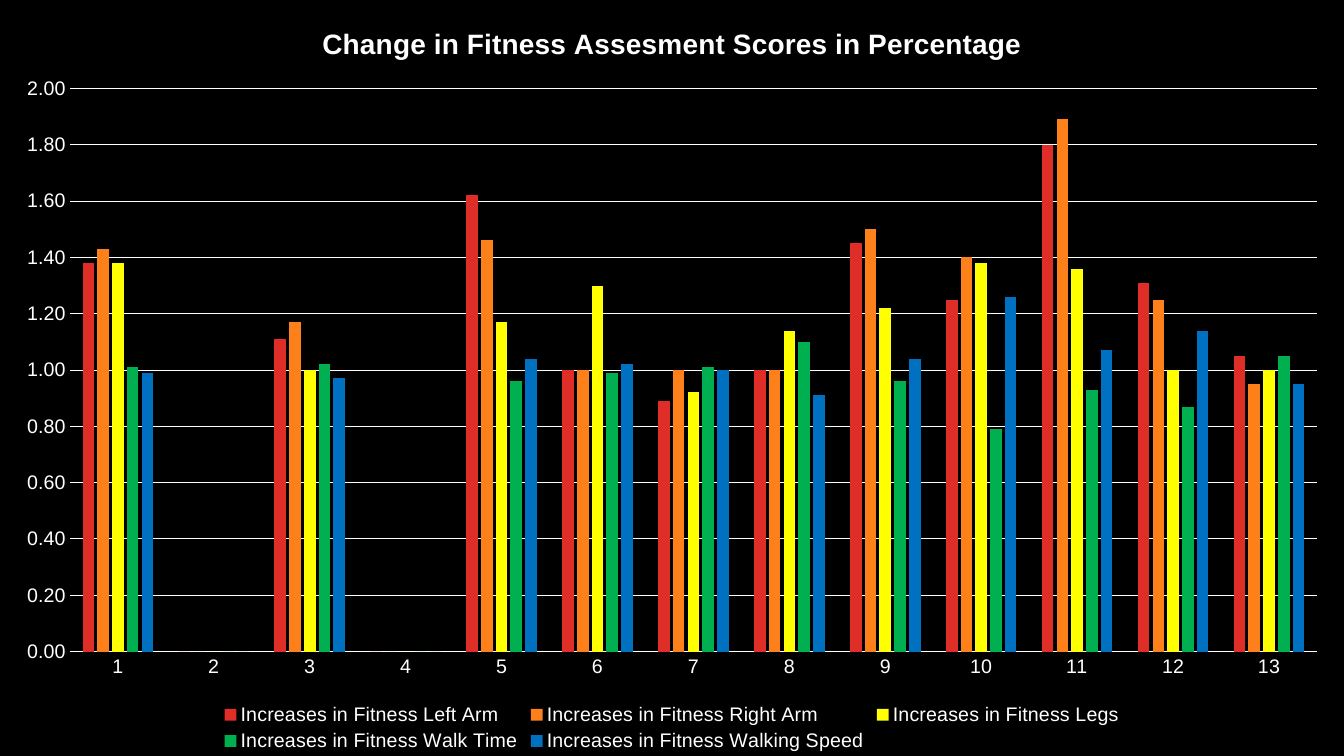
from lxml.etree import SubElement
from pptx import Presentation
from pptx.chart.data import CategoryChartData
from pptx.dml.color import RGBColor
from pptx.enum.chart import XL_CHART_TYPE, XL_LEGEND_POSITION, XL_TICK_MARK
from pptx.oxml.ns import qn
from pptx.util import Cm, Pt

BLACK = RGBColor(0x00, 0x00, 0x00)
WHITE = RGBColor(0xFF, 0xFF, 0xFF)
RED = RGBColor(0xDF, 0x2E, 0x28)
ORANGE = RGBColor(0xFE, 0x80, 0x1A)
YELLOW = RGBColor(0xFF, 0xFF, 0x00)
GREEN = RGBColor(0x00, 0xB0, 0x50)
BLUE = RGBColor(0x00, 0x70, 0xC0)

TITLE = "Change in Fitness Assesment Scores in Percentage"
PARTICIPANTS = [str(number) for number in range(1, 14)]
SCORES = [
    ("Left Arm", RED,
     [1.38, 0, 1.11, 0, 1.62, 1, 0.89, 1, 1.45, 1.25, 1.8, 1.31, 1.05]),
    ("Right Arm", ORANGE,
     [1.43, 0, 1.17, 0, 1.46, 1, 1, 1, 1.5, 1.4, 1.89, 1.25, 0.95]),
    ("Legs", YELLOW,
     [1.38, 0, 1, 0, 1.17, 1.3, 0.92, 1.14, 1.22, 1.38, 1.36, 1, 1]),
    ("Walk Time", GREEN,
     [1.01, 0, 1.02, 0, 0.96, 0.99, 1.01, 1.1, 0.96, 0.79, 0.93, 0.87, 1.05]),
    ("Walking Speed", BLUE,
     [0.99, 0, 0.97, 0, 1.04, 1.02, 1, 0.91, 1.04, 1.26, 1.07, 1.14, 0.95]),
]


def style_font(font, size=14, bold=False):
    font.name = "Arial"
    font.size = Pt(size)
    font.bold = bold
    font.color.rgb = WHITE


def style_line(line):
    line.color.rgb = WHITE
    line.width = Pt(0.75)


def place_plot_area(chart, **fractions):
    """Fix the inner plot area as fractions of the chart's box."""
    plot_area = chart._chartSpace.chart.plotArea
    layout = plot_area.find(qn("c:layout"))
    if layout is None:
        layout = SubElement(plot_area, qn("c:layout"))
        plot_area.insert(0, layout)
    manual = SubElement(layout, qn("c:manualLayout"))
    settings = {"layoutTarget": "inner", "xMode": "edge", "yMode": "edge", **fractions}
    for tag, value in settings.items():
        SubElement(manual, qn(f"c:{tag}")).set("val", str(value))


def add_fitness_chart(slide, left, top, width, height):
    # Data
    scores = CategoryChartData(number_format="0.00")
    scores.categories = PARTICIPANTS
    for measure, _, values in SCORES:
        scores.add_series(f"Increases in Fitness {measure}", values)
    chart = slide.shapes.add_chart(
        XL_CHART_TYPE.COLUMN_CLUSTERED, left, top, width, height, scores).chart
    style_font(chart.font)
    place_plot_area(chart, x=0.052, y=0.117, w=0.928, h=0.745)

    # Title
    chart.has_title = True
    title_run = chart.chart_title.text_frame.paragraphs[0].add_run()
    title_run.text = TITLE
    style_font(title_run.font, 20, True)
    chart.chart_title.include_in_layout = False

    # Columns
    columns = chart.plots[0]
    columns.gap_width = 219
    columns.overlap = -27
    columns.vary_by_categories = False
    for series, (_, color, _) in zip(columns.series, SCORES):
        series.format.fill.solid()
        series.format.fill.fore_color.rgb = color
        series.invert_if_negative = False

    # Axes
    for axis in (chart.category_axis, chart.value_axis):
        axis.major_tick_mark = axis.minor_tick_mark = XL_TICK_MARK.NONE
        style_font(axis.tick_labels.font)
    style_line(chart.category_axis.format.line)
    score_axis = chart.value_axis
    score_axis.minimum_scale, score_axis.maximum_scale = 0, 2
    score_axis.major_unit = 0.2
    score_axis.tick_labels.number_format = "0.00"
    score_axis.tick_labels.number_format_is_linked = False
    score_axis.format.line.fill.background()
    style_line(score_axis.major_gridlines.format.line)

    # Legend
    chart.has_legend = True
    chart.legend.position = XL_LEGEND_POSITION.BOTTOM
    chart.legend.include_in_layout = False
    style_font(chart.legend.font)


def main():
    deck = Presentation()
    deck.slide_width, deck.slide_height = Cm(33.87), Cm(19.05)
    slide = deck.slides.add_slide(deck.slide_layouts[6])
    slide.background.fill.solid()
    slide.background.fill.fore_color.rgb = BLACK
    add_fitness_chart(slide, Cm(0), Cm(0), deck.slide_width, deck.slide_height)
    deck.save("out.pptx")


if __name__ == "__main__":
    main()
